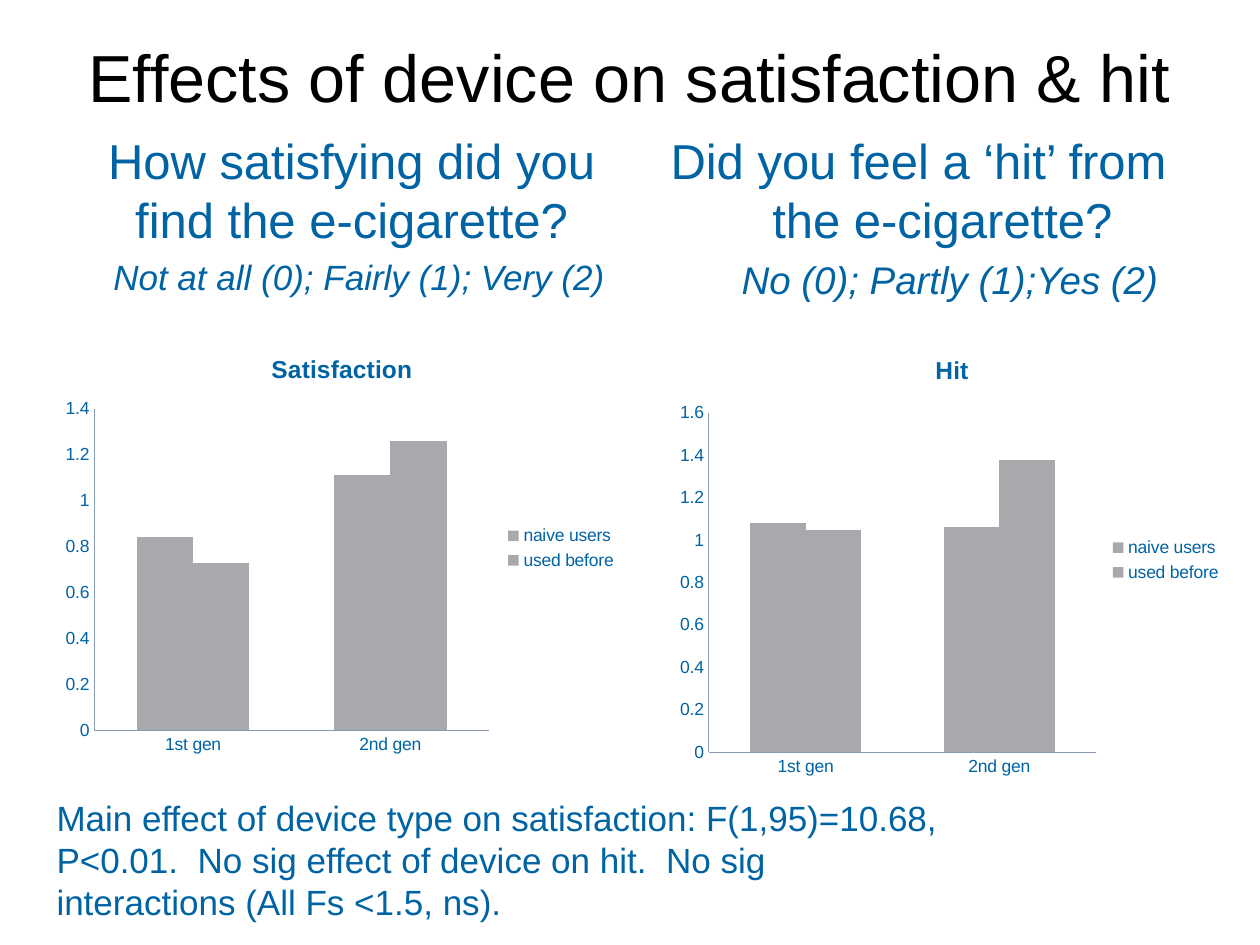
from dataclasses import dataclass

from lxml.etree import SubElement
from pptx import Presentation
from pptx.chart.data import CategoryChartData
from pptx.dml.color import RGBColor
from pptx.enum.chart import XL_CHART_TYPE as ChartType
from pptx.enum.chart import XL_LEGEND_POSITION as LegendPosition
from pptx.enum.chart import XL_TICK_MARK as TickMark
from pptx.enum.text import MSO_ANCHOR as Anchor
from pptx.enum.text import MSO_AUTO_SIZE as AutoSize
from pptx.enum.text import PP_ALIGN as Align
from pptx.oxml.ns import qn
from pptx.util import Cm, Pt


@dataclass(frozen=True)
class Theme:
    """Colours, font and type sizes of the deck."""
    font: str = "Arial"
    ink: RGBColor = RGBColor(0x00, 0x00, 0x00)
    blue: RGBColor = RGBColor(0x00, 0x63, 0xA4)
    bar: RGBColor = RGBColor(0xA7, 0xA9, 0xAC)
    axis: RGBColor = RGBColor(0x8A, 0x9B, 0xB8)
    title: int = 38
    question: int = 28
    note: int = 20
    chart_title: int = 14
    chart_text: int = 10


@dataclass(frozen=True)
class Box:
    """A rectangle in centimetres."""
    left: float
    top: float
    width: float
    height: float

    def lengths(self):
        """Return left, top, width and height as lengths."""
        return Cm(self.left), Cm(self.top), Cm(self.width), Cm(self.height)


@dataclass(frozen=True)
class Measure:
    """A rated question with its scale and mean scores."""
    question: str
    scale: str
    scale_size: int
    scale_indent: float
    name: str
    scores: dict
    top_score: float


THEME = Theme()
GENERATIONS = ("1st gen", "2nd gen")
FIRST_LINE = 1.27
PLOT_AREA = {"x": 0.07, "y": 0.175, "w": 0.685, "h": 0.75}
SATISFACTION = Measure(
    "\tHow satisfying did you find the e-cigarette?",
    "Not at all (0); Fairly (1); Very (2)", 20, 2.69, "Satisfaction",
    {"naive users": (0.84, 1.11), "used before": (0.73, 1.26)}, 1.4)
HIT = Measure(
    "Did you feel a ‘hit’ from the e-cigarette?",
    "No (0); Partly (1);Yes (2)", 22, 2.06, "Hit",
    {"naive users": (1.08, 1.06), "used before": (1.05, 1.38)}, 1.6)


def style(font, size, color=THEME.blue, bold=None, italic=None):
    """Set the face, size and colour of a font."""
    font.name, font.size = THEME.font, Pt(size)
    font.bold, font.italic = bold, italic
    font.color.rgb = color


def place(shape, box):
    """Move a shape into a box."""
    shape.left, shape.top, shape.width, shape.height = box.lengths()


def indent(para, margin, first):
    """Give an unbulleted paragraph a left margin and first-line indent."""
    props = para._p.get_or_add_pPr()
    props.set("marL", str(Cm(margin)))
    props.set("indent", str(Cm(first)))
    SubElement(props, qn("a:buNone"))


def add_heading(page, box, text):
    """Fill the title placeholder."""
    title = page.shapes.title
    place(title, box)
    frame = title.text_frame
    frame.text = text
    frame.auto_size = AutoSize.NONE
    frame.vertical_anchor = Anchor.MIDDLE
    style(frame.paragraphs[0].font, THEME.title, THEME.ink)


def add_question(body, box, measure):
    """Fill a body placeholder with a question and its scale."""
    place(body, box)
    frame = body.text_frame
    frame.auto_size = AutoSize.NONE
    question, scale = frame.paragraphs[0], frame.add_paragraph()
    question.text, scale.text = measure.question, measure.scale
    scale.level = 1
    indent(question, 0.96, -0.96)
    indent(scale, measure.scale_indent, FIRST_LINE - measure.scale_indent)
    question.space_before, scale.space_before = Pt(0), Pt(measure.scale_size / 5)
    question.alignment = scale.alignment = Align.CENTER
    style(question.font, THEME.question)
    style(scale.font, measure.scale_size, italic=True)


def set_plot_area(chart):
    """Fix the inner plot area as fractions of the chart."""
    plot_area = chart._chartSpace.chart.plotArea
    for old in plot_area.findall(qn("c:layout")):
        plot_area.remove(old)
    layout = SubElement(plot_area, qn("c:layout"))
    plot_area.insert(0, layout)
    manual = SubElement(layout, qn("c:manualLayout"))
    settings = {"layoutTarget": "inner", "xMode": "edge", "yMode": "edge", **PLOT_AREA}
    for tag, value in settings.items():
        SubElement(manual, qn(f"c:{tag}")).set("val", str(value))


def add_scores(page, box, measure):
    """Add the column chart of a measure."""
    data = CategoryChartData()
    data.categories = GENERATIONS
    for group, scores in measure.scores.items():
        data.add_series(group, scores)
    chart = page.shapes.add_chart(ChartType.COLUMN_CLUSTERED, *box.lengths(), data).chart
    style(chart.font, THEME.chart_text)
    chart.has_title = True
    heading = chart.chart_title.text_frame
    heading.text = measure.name
    style(heading.paragraphs[0].font, THEME.chart_title, bold=True)
    chart.has_legend = True
    chart.legend.position = LegendPosition.RIGHT
    chart.legend.include_in_layout = False
    for axis in (chart.category_axis, chart.value_axis):
        axis.has_major_gridlines = False
        axis.major_tick_mark = axis.minor_tick_mark = TickMark.NONE
        axis.format.line.color.rgb = THEME.axis
    scale = chart.value_axis
    scale.minimum_scale, scale.maximum_scale, scale.major_unit = 0, measure.top_score, 0.2
    plot = chart.plots[0]
    plot.gap_width, plot.overlap, plot.vary_by_categories = 150, 0, False
    for series in plot.series:
        series.format.fill.solid()
        series.format.fill.fore_color.rgb = THEME.bar
    set_plot_area(chart)


def add_panel(page, body, box, measure, inset, width, height):
    """Place a question with its chart below it."""
    add_question(body, box, measure)
    chart_box = Box(box.left + inset, box.top + 4.22, width, height)
    add_scores(page, chart_box, measure)


def add_finding(page, box, text):
    """Add the summary of the results."""
    frame = page.shapes.add_textbox(*box.lengths()).text_frame
    frame.word_wrap = True
    frame.text = text
    style(frame.paragraphs[0].font, THEME.note)


def main():
    """Build and save the deck."""
    deck = Presentation()
    deck.slide_width, deck.slide_height = Cm(25.4), Cm(19.05)
    page = deck.slides.add_slide(deck.slide_layouts[3])
    left_body, right_body = page.placeholders[1], page.placeholders[2]
    add_heading(page, Box(1.27, 0.53, 22.86, 2.01), "Effects of device on satisfaction & hit")
    add_panel(page, left_body, Box(0.71, 2.51, 11.79, 14.5), SATISFACTION, 0.38, 11.61, 8.64)
    add_panel(page, right_body, Box(12.9, 2.51, 11.23, 14.5), HIT, 0.59, 11.4, 9.12)
    add_finding(page, Box(0.89, 15.93, 18.55, 2.82),
                "Main effect of device type on satisfaction: F(1,95)=10.68, P<0.01.  "
                "No sig effect of device on hit.  No sig interactions (All Fs <1.5, ns).")
    deck.save("out.pptx")


if __name__ == "__main__":
    main()
